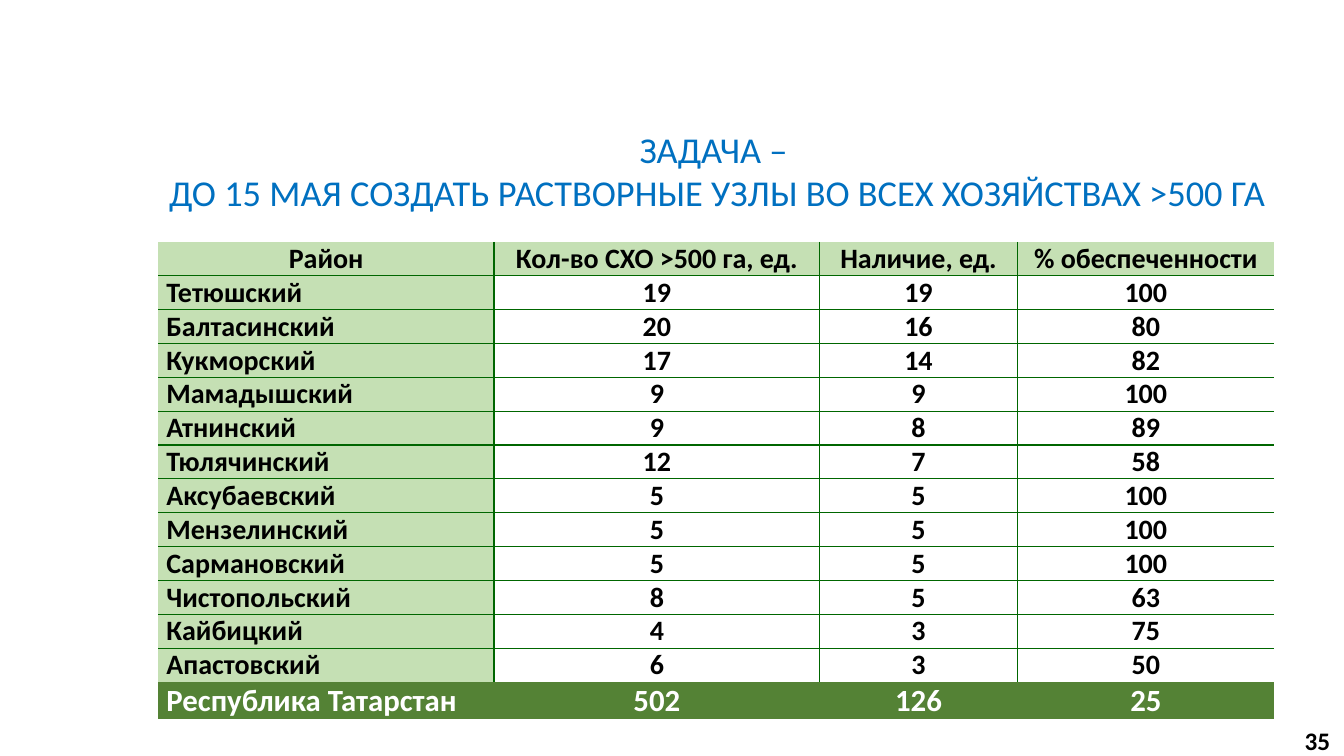
import pptx
import pptx.dml.color
import pptx.enum.shapes
import pptx.enum.text
import pptx.oxml.ns
import pptx.util
from lxml import etree

Inches = pptx.util.Inches
ALIGN = pptx.enum.text.PP_ALIGN
ANCHOR = pptx.enum.text.MSO_ANCHOR

COLORS = {
    "title": "0070C0",
    "text": "000000",
    "total_text": "FFFFFF",
    "header": "C5E0B4",
    "total": "548235",
    "border": "006600",
}
TITLE = ["ЗАДАЧА – ", "ДО 15 МАЯ СОЗДАТЬ РАСТВОРНЫЕ УЗЛЫ ВО ВСЕХ ХОЗЯЙСТВАХ >500 ГА"]
ROWS = [
    ("Район", "Кол-во СХО >500 га, ед.", "Наличие, ед.", "% обеспеченности"),
    ("Тетюшский", 19, 19, 100),
    ("Балтасинский", 20, 16, 80),
    ("Кукморский", 17, 14, 82),
    ("Мамадышский", 9, 9, 100),
    ("Атнинский", 9, 8, 89),
    ("Тюлячинский", 12, 7, 58),
    ("Аксубаевский", 5, 5, 100),
    ("Мензелинский", 5, 5, 100),
    ("Сармановский", 5, 5, 100),
    ("Чистопольский", 8, 5, 63),
    ("Кайбицкий", 4, 3, 75),
    ("Апастовский", 6, 3, 50),
    ("Республика Татарстан", 502, 126, 25),
]
COL_WIDTHS = [3.33, 3.23, 1.96, 2.55]
TABLE_HEIGHT, TOTAL_HEIGHT = 4.74, 0.37


def rgb(name):
    return pptx.dml.color.RGBColor.from_string(COLORS[name])


def style_paragraph(p, size, color, bold=False, align=ALIGN.CENTER):
    p.alignment = align
    p.font.name = "Calibri"
    p.font.size = pptx.util.Pt(size)
    p.font.bold = bold
    p.font.color.rgb = rgb(color)


def add_title(slide):
    tf = slide.shapes.add_textbox(Inches(0.91), Inches(1.21), Inches(12.42), Inches(0.98)).text_frame
    tf.word_wrap = True
    tf.text = "\n".join(TITLE)
    for p in tf.paragraphs:
        style_paragraph(p, 26, "title")


def add_page_number(slide, number):
    sp = slide.shapes.add_shape(pptx.enum.shapes.MSO_SHAPE.ROUNDED_RECTANGLE,
                                Inches(12.84), Inches(7.2), Inches(0.45), Inches(0.3))
    sp.adjustments[0] = 0
    sp.shadow.inherit = False
    sp.fill.background()
    sp.line.fill.background()
    tf = sp.text_frame
    tf.margin_left = tf.margin_right = 0
    tf.vertical_anchor = ANCHOR.MIDDLE
    tf.text = number
    style_paragraph(tf.paragraphs[0], 18, "text", bold=True)


def set_borders(cell, sides):
    """Draw the listed sides (of L, R, T, B) and clear the others."""
    qn = pptx.oxml.ns.qn
    tc_pr = cell._tc.get_or_add_tcPr()
    for side in "LRTB":
        ln = etree.SubElement(tc_pr, qn(f"a:ln{side}"), w=str(pptx.util.Pt(1)))
        if side in sides:
            fill = etree.SubElement(ln, qn("a:solidFill"))
            etree.SubElement(fill, qn("a:srgbClr"), val=COLORS["border"])
        else:
            etree.SubElement(ln, qn("a:noFill"))


def inner_sides(row, col):
    """Sides shared with another cell; the total row has none."""
    total = len(ROWS) - 1
    if row == total:
        return ""
    inner = {"L": col > 0, "R": col < len(COL_WIDTHS) - 1, "T": row > 0, "B": row < total - 1}
    return "".join(side for side, shown in inner.items() if shown)


def fill_cell(cell, value, row, col):
    is_header, is_total = row == 0, row == len(ROWS) - 1
    set_borders(cell, inner_sides(row, col))
    if is_total or is_header or col == 0:
        cell.fill.solid()
        cell.fill.fore_color.rgb = rgb("total" if is_total else "header")
    else:
        cell.fill.background()
    is_name = col == 0 and not is_header
    cell.margin_top = cell.margin_bottom = 0
    cell.margin_left = cell.margin_right = Inches(0.01 if is_header else 0)
    if is_name:
        cell.margin_left = Inches(0.08)
    cell.vertical_anchor = ANCHOR.MIDDLE if is_header else ANCHOR.BOTTOM
    cell.text = str(value)
    style_paragraph(cell.text_frame.paragraphs[0], 22 if is_total else 20,
                    "total_text" if is_total else "text", bold=True,
                    align=ALIGN.LEFT if is_name else ALIGN.CENTER)


def add_district_table(slide):
    table = slide.shapes.add_table(len(ROWS), len(COL_WIDTHS), Inches(1.57), Inches(2.4),
                                   Inches(sum(COL_WIDTHS)), Inches(TABLE_HEIGHT)).table
    table.first_row = table.horz_banding = False
    for column, width in zip(table.columns, COL_WIDTHS):
        column.width = Inches(width)
    for row in table.rows:
        row.height = Inches((TABLE_HEIGHT - TOTAL_HEIGHT) / (len(ROWS) - 1))
    table.rows[len(ROWS) - 1].height = Inches(TOTAL_HEIGHT)
    for r, values in enumerate(ROWS):
        for c, value in enumerate(values):
            fill_cell(table.cell(r, c), value, r, c)


def main():
    prs = pptx.Presentation()
    prs.slide_width, prs.slide_height = Inches(13.33), Inches(7.5)
    slide = prs.slides.add_slide(prs.slide_layouts[6])
    add_title(slide)
    add_page_number(slide, "35")
    add_district_table(slide)
    prs.save("out.pptx")


if __name__ == "__main__":
    main()
